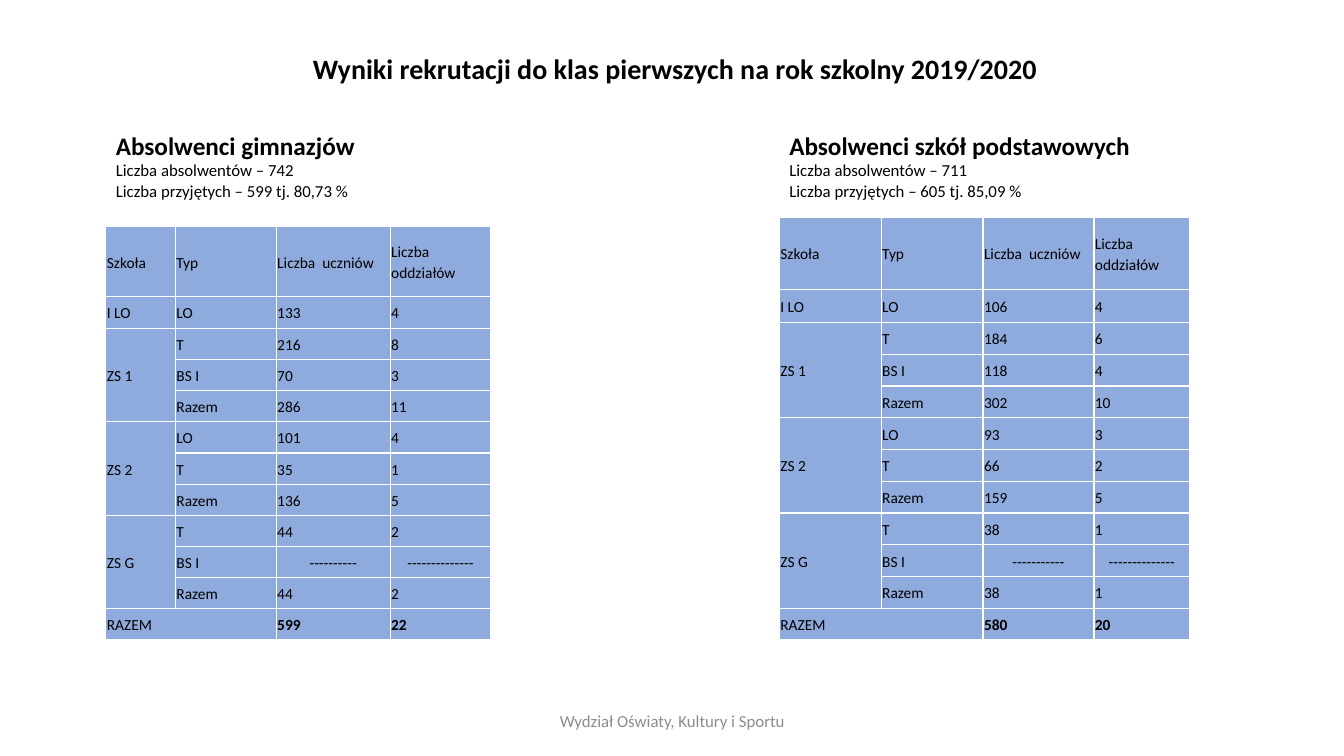
from lxml import etree
from pptx import Presentation
from pptx.dml.color import RGBColor
from pptx.enum.text import MSO_ANCHOR as ANCHOR, MSO_AUTO_SIZE as AUTO_SIZE, PP_ALIGN as ALIGN
from pptx.oxml.ns import qn
from pptx.util import Inches, Pt

BLACK = RGBColor(0x00, 0x00, 0x00)
WHITE = RGBColor(0xFF, 0xFF, 0xFF)
GREY = RGBColor(0x8C, 0x8C, 0x8C)
BLUE = RGBColor(0x8F, 0xAA, 0xDC)

HEADER = ("Szkoła", "Typ", "Liczba  uczniów", "Liczba oddziałów")
SCHOOL_TYPES = (
    ("I LO", "LO"),
    ("ZS 1", "T"), ("", "BS I"), ("", "Razem"),
    ("ZS 2", "LO"), ("", "T"), ("", "Razem"),
    ("ZS G", "T"), ("", "BS I"), ("", "Razem"),
    ("RAZEM", ""),
)
MERGES = (((2, 0), (4, 0)), ((5, 0), (7, 0)), ((8, 0), (10, 0)), ((11, 0), (11, 1)))

GYMNASIUM_COUNTS = (
    ("133", "4"), ("216", "8"), ("70", "3"), ("286", "11"),
    ("101", "4"), ("35", "1"), ("136", "5"),
    ("44", "2"), ("----------", "--------------"), ("44", "2"), ("599", "22"),
)
PRIMARY_COUNTS = (
    ("106", "4"), ("184", "6"), ("118", "4"), ("302", "10"),
    ("93", "3"), ("66", "2"), ("159", "5"),
    ("38", "1"), ("-----------", "--------------"), ("38", "1"), ("580", "20"),
)


class SlideBuilder:
    font = "Calibri"

    def __init__(self, prs):
        self.s = prs.slides.add_slide(prs.slide_layouts[5])

    def format_runs(self, p, size, bold=False, color=BLACK):
        for r in p.runs:
            r.font.name = self.font
            r.font.size = Pt(size)
            r.font.bold = bold
            r.font.color.rgb = color

    def place(self, sp, x, y, w, h):
        sp.left, sp.top, sp.width, sp.height = (Inches(v) for v in (x, y, w, h))

    def title(self, text, x, y, w, h):
        sp = self.s.shapes.title
        self.place(sp, x, y, w, h)
        tf = sp.text_frame
        tf.text = text
        tf.word_wrap = True
        tf.auto_size = AUTO_SIZE.SHAPE_TO_FIT_TEXT
        tf.vertical_anchor = ANCHOR.TOP
        tf.paragraphs[0].alignment = ALIGN.CENTER
        self.format_runs(tf.paragraphs[0], 20, bold=True)

    def summary(self, lines, x, y, w, h):
        """Add a bold heading followed by smaller plain lines."""
        tf = self.s.shapes.add_textbox(*(Inches(v) for v in (x, y, w, h))).text_frame
        tf.text = "\n".join(lines)
        tf.word_wrap = True
        tf.auto_size = AUTO_SIZE.SHAPE_TO_FIT_TEXT
        for i, p in enumerate(tf.paragraphs):
            self.format_runs(p, 12 if i else 18, bold=i == 0)

    def footer(self, text, x, y, w, h):
        tf = self.s.shapes.add_textbox(*(Inches(v) for v in (x, y, w, h))).text_frame
        tf.text = text
        tf.word_wrap = True
        tf.vertical_anchor = ANCHOR.MIDDLE
        tf.paragraphs[0].alignment = ALIGN.CENTER
        self.format_runs(tf.paragraphs[0], 12, color=GREY)

    def borders(self, cell):
        tc_pr = cell._tc.get_or_add_tcPr()
        for side in ("lnL", "lnR", "lnT", "lnB"):
            ln = etree.SubElement(tc_pr, qn(f"a:{side}"), w=str(Pt(1)))
            fill = etree.SubElement(ln, qn("a:solidFill"))
            etree.SubElement(fill, qn("a:srgbClr"), val=str(WHITE))

    def cell(self, cell, text, bold):
        self.borders(cell)
        cell.fill.solid()
        cell.fill.fore_color.rgb = BLUE
        cell.vertical_anchor = ANCHOR.MIDDLE
        cell.margin_left = cell.margin_right = cell.margin_top = Inches(0.01)
        cell.margin_bottom = 0
        p = cell.text_frame.paragraphs[0]
        p.text = text
        p.line_spacing = 1.07
        p.space_after = Pt(8)
        if text.startswith("--"):
            p.alignment = ALIGN.CENTER
        self.format_runs(p, 11, bold)

    def table(self, counts, x, y, h, col_widths, top_heights):
        """Add a results table; rows below top_heights share the remaining height."""
        rows = [HEADER] + [types + count for types, count in zip(SCHOOL_TYPES, counts)]
        frame = self.s.shapes.add_table(
            len(rows), len(HEADER), Inches(x), Inches(y), Inches(sum(col_widths)), Inches(h))
        table = frame.table
        rest = len(rows) - len(top_heights)
        heights = top_heights + ((h - sum(top_heights)) / rest,) * rest
        for col, width in zip(table.columns, col_widths):
            col.width = Inches(width)
        for row, height in zip(table.rows, heights):
            row.height = Inches(height)
        for i, values in enumerate(rows):
            for j, text in enumerate(values):
                self.cell(table.cell(i, j), text, bold=i == len(rows) - 1 and j > 1)
        for first, last in MERGES:
            table.cell(*first).merge(table.cell(*last))


def main():
    prs = Presentation()
    prs.slide_width, prs.slide_height = Inches(13.33), Inches(7.5)
    slide = SlideBuilder(prs)
    slide.title("Wyniki rekrutacji do klas pierwszych na rok szkolny 2019/2020",
                2.99, 0.46, 7.41, 0.44)
    slide.summary(("Absolwenci gimnazjów", "Liczba absolwentów – 742",
                   "Liczba przyjętych – 599 tj. 80,73 %"), 1.05, 1.24, 4.45, 1.01)
    slide.summary(("Absolwenci szkół podstawowych", "Liczba absolwentów – 711",
                   "Liczba przyjętych – 605 tj. 85,09 %"), 7.73, 1.24, 3.79, 1.01)
    slide.table(GYMNASIUM_COUNTS, 1.05, 2.25, 4.1, (0.69, 1, 1.13, 1), (0.69, 0.32))
    slide.table(PRIMARY_COUNTS, 7.73, 2.16, 4.19, (1.01, 1.01, 1.1, 0.95), (0.71, 0.33))
    slide.footer("Wydział Oświaty, Kultury i Sportu", 4.42, 6.95, 4.5, 0.4)
    prs.save("out.pptx")


if __name__ == "__main__":
    main()
